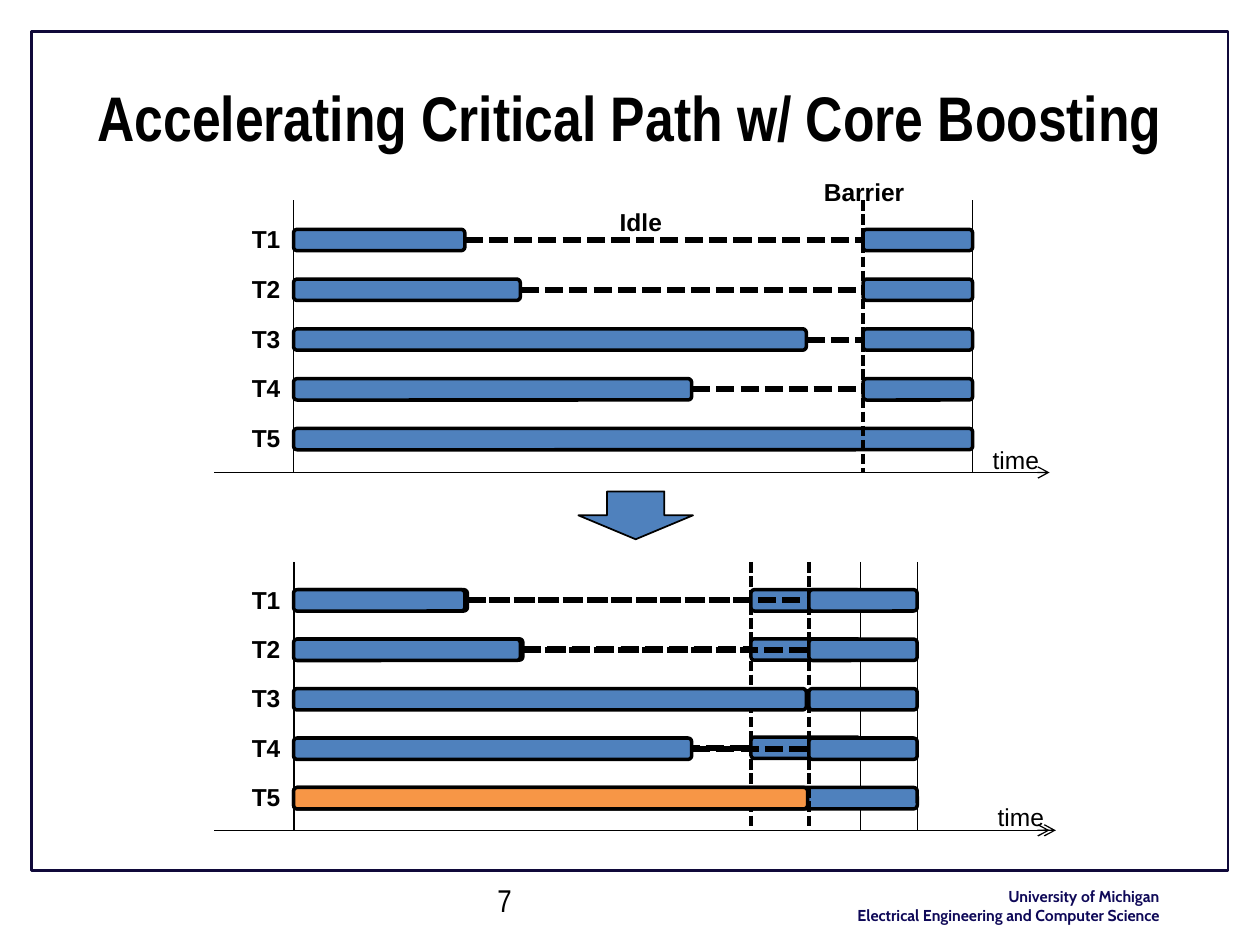
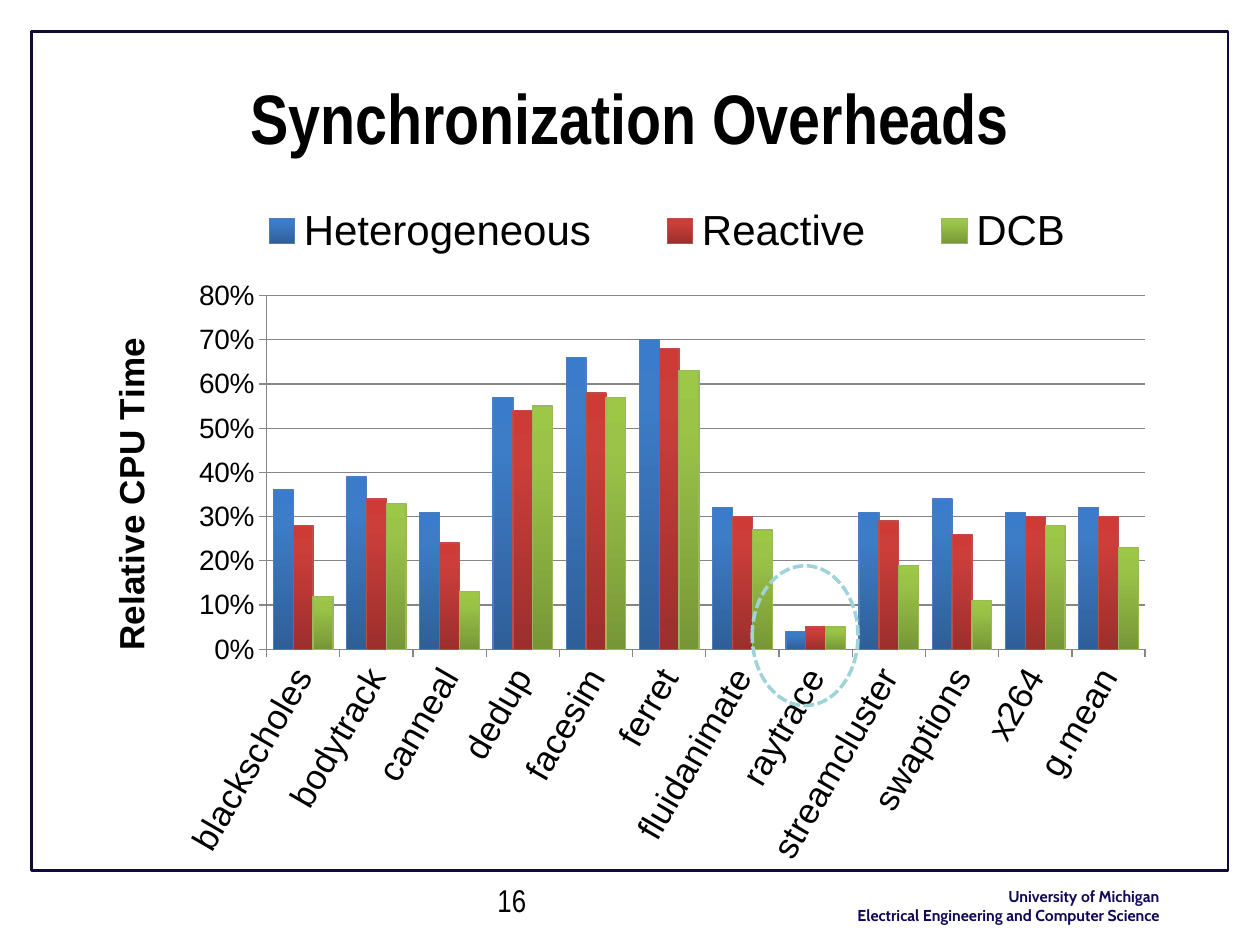
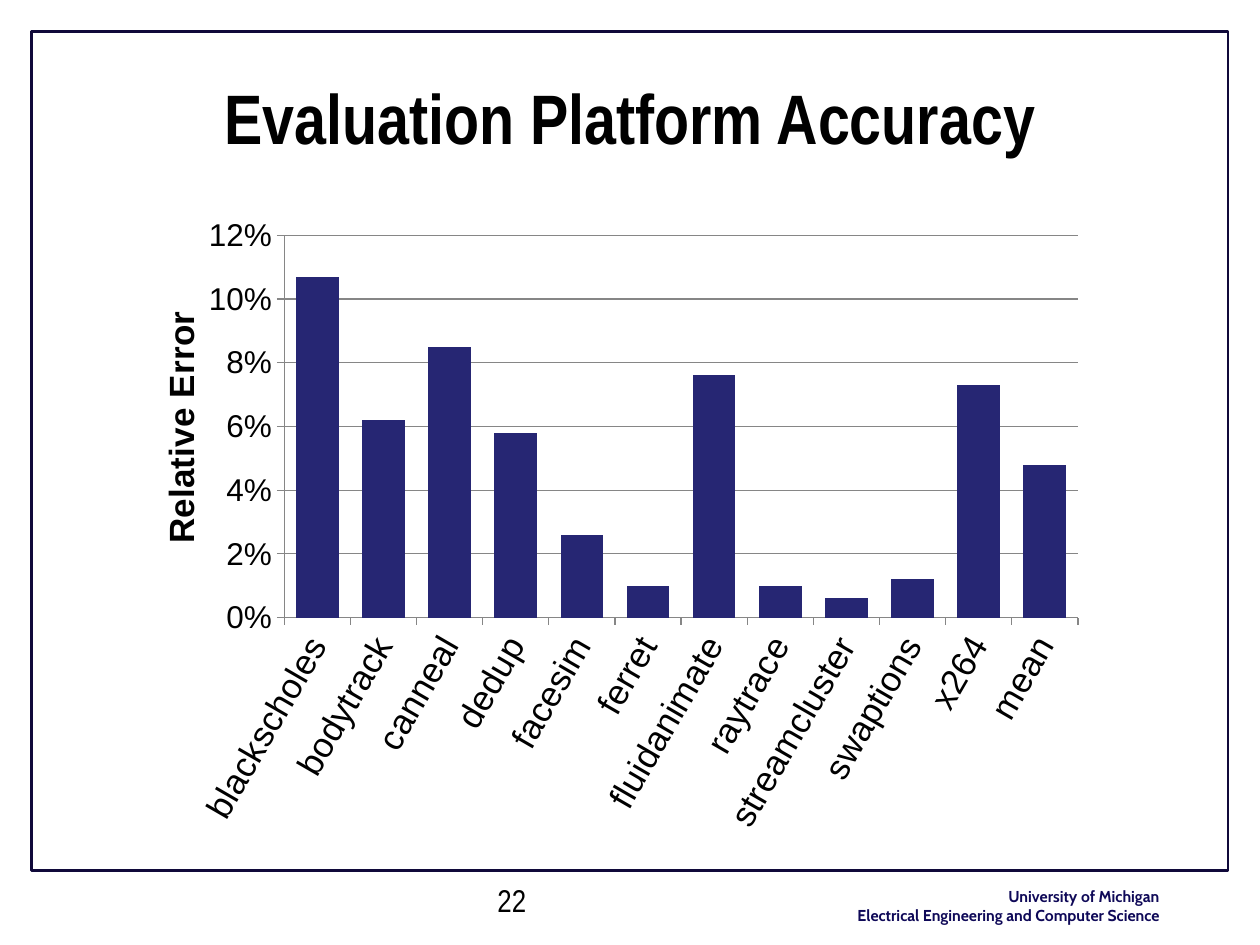
import copy

import lxml.etree
import pptx
import pptx.chart.data
import pptx.dml.color
import pptx.enum.chart
import pptx.enum.dml
import pptx.enum.shapes
import pptx.enum.text
import pptx.oxml.ns
import pptx.util

RGB = pptx.dml.color.RGBColor
Inches, Pt, qn = pptx.util.Inches, pptx.util.Pt, pptx.oxml.ns.qn
SHAPE = pptx.enum.shapes.MSO_SHAPE
ALIGN = pptx.enum.text.PP_ALIGN
DASH = pptx.enum.dml.MSO_LINE.SQUARE_DOT

BLACK = RGB(0x00, 0x00, 0x00)
NAVY_TEXT = RGB(0x0F, 0x09, 0x58)
NAVY_FRAME = RGB(0x10, 0x09, 0x3A)
BLUE = RGB(0x4F, 0x81, 0xBD)
ORANGE = RGB(0xF7, 0x96, 0x46)
AQUA = RGB(0x9E, 0xD3, 0xD7)
INDIGO = RGB(0x26, 0x26, 0x73)
GRID_GREY = RGB(0x86, 0x86, 0x86)

TITLE_FONT, BODY_FONT, FOOTER_FONT = "Arial Narrow", "Arial", "Cabin"
FOOTER = "University of Michigan\nElectrical Engineering and Computer Science"

THREADS = ("T1", "T2", "T3", "T4", "T5")
BAR_HEIGHT = 0.17
AXIS_START = 1.7

# Stops are where each thread reaches the barrier; None leaves a thread out.
# Threads in shared_runs take their first bar from the timeline drawn over this one.
BASELINE = dict(top=1.59, axis_y=3.75, first_row=1.82, last_row=3.4,
                start=2.33, barrier=6.85, end=7.72, axis_end=8.33, time_at=7.78,
                stops=(3.69, 4.13, 6.4, 5.49, 7.72), shared_runs=(), boosted=None)
BOOSTED_EARLY = dict(top=4.46, axis_y=6.59, first_row=4.68, last_row=6.24,
                     start=2.34, barrier=5.96, end=6.83, axis_end=8.38, time_at=None,
                     stops=(3.71, 4.15, None, 5.41, None), shared_runs=("T4",),
                     boosted=None)
BOOSTED = dict(top=4.46, axis_y=6.59, first_row=4.68, last_row=6.25,
               start=2.33, barrier=6.42, end=7.28, axis_end=8.33, time_at=7.82,
               stops=(3.69, 4.13, 6.4, 5.49, 7.28), shared_runs=(), boosted=6.41)

BENCHMARKS = ["blackscholes", "bodytrack", "canneal", "dedup", "facesim", "ferret",
              "fluidanimate", "raytrace", "streamcluster", "swaptions", "x264"]
# Plot, legend and axis title places are shares of the chart's size.
OVERHEADS = dict(
    box=(0.64, 1.54, 8.63, 5.45), plot=(0.171, 0.148, 0.808, 0.515),
    categories=BENCHMARKS + ["g.mean"], axis="Relative CPU Time", axis_at=(0.02, 0.2),
    top=0.8, step=0.1, tick_size=16, gap=69, legend=(0.116, 0.01, 0.847, 0.087),
    series=[
        ("Heterogeneous",
         (0.36, 0.39, 0.31, 0.57, 0.66, 0.7, 0.32, 0.04, 0.31, 0.34, 0.31, 0.32),
         ("2F5F99", "3D7CC7", "3A7CCB"), "4B7EBC"),
        ("Reactive",
         (0.28, 0.34, 0.24, 0.54, 0.58, 0.68, 0.3, 0.05, 0.29, 0.26, 0.3, 0.3),
         ("9C2F2D", "CB3E3A", "CE3B37"), "BF4C48"),
        ("DCB",
         (0.12, 0.33, 0.13, 0.55, 0.57, 0.63, 0.27, 0.05, 0.19, 0.11, 0.28, 0.23),
         ("779737", "9BC348", "9DC746"), "98B955"),
    ])
ACCURACY = dict(
    box=(1, 1.4, 7.71, 5.38), plot=(0.163, 0.087, 0.817, 0.564),
    categories=BENCHMARKS + ["mean"], axis="Relative Error", axis_at=(0.027, 0.19),
    top=0.12, step=0.02, tick_size=18, gap=55, legend=None,
    series=[
        ("Series 1",
         (0.107, 0.062, 0.085, 0.058, 0.026, 0.01, 0.076, 0.01, 0.006, 0.012, 0.073, 0.048),
         None, None),
    ])


def inches(lengths):
    return [Inches(length) for length in lengths]


def style_font(font, size, name, color=BLACK, bold=False):
    font.size, font.name, font.bold = Pt(size), name, bold
    font.color.rgb = color


def add_text(shapes, box, text, size=14, name=BODY_FONT, color=BLACK, bold=True,
             align=ALIGN.LEFT, wrap=True, anchor=pptx.enum.text.MSO_ANCHOR.TOP):
    frame = shapes.add_textbox(*inches(box)).text_frame
    frame.word_wrap, frame.vertical_anchor = wrap, anchor
    frame.text = text
    for paragraph in frame.paragraphs:
        paragraph.alignment = align
        style_font(paragraph.font, size, name, color, bold)


def add_outline(shapes, kind, box, width, color=BLACK, fill=None):
    shape = shapes.add_shape(kind, *inches(box))
    shape.shadow.inherit = False
    if fill is None:
        shape.fill.background()
    else:
        shape.fill.solid()
        shape.fill.fore_color.rgb = fill
    shape.line.color.rgb, shape.line.width = color, Pt(width)
    return shape


def add_line(shapes, begin, end, width=0.75, dashed=False):
    line = shapes.add_connector(pptx.enum.shapes.MSO_CONNECTOR.STRAIGHT,
                                *inches(begin + end))
    line.line.color.rgb, line.line.width = BLACK, Pt(width)
    if dashed:
        line.line.dash_style = DASH
    lxml.etree.SubElement(line._element.spPr, qn("a:effectLst"))
    return line


def add_timeline(slide, plan):
    """Draw the threads' bars, their idle times, the barrier and the time axis."""
    shapes = slide.shapes.add_group_shape().shapes
    top, axis_y, start, barrier, end = (
        plan[key] for key in ("top", "axis_y", "start", "barrier", "end"))
    pitch = (plan["last_row"] - plan["first_row"]) / (len(THREADS) - 1)
    row_tops = [plan["first_row"] + row * pitch for row in range(len(THREADS))]
    rows = [row for row in zip(THREADS, plan["stops"], row_tops) if row[1]]

    def add_bar(left, right, y, fill=BLUE):
        return add_outline(shapes, SHAPE.ROUNDED_RECTANGLE,
                           (left, y, right - left, BAR_HEIGHT), 2, fill=fill)

    for x in (start, end):
        add_line(shapes, (x, top), (x, axis_y))
    axis = add_line(shapes, (plan["axis_end"], axis_y), (AXIS_START, axis_y))
    lxml.etree.SubElement(axis.line._get_or_add_ln(), qn("a:headEnd"), type="arrow")

    runs = {thread: add_bar(start, stop, y) for thread, stop, y in rows
            if thread not in plan["shared_runs"]}
    add_line(shapes, (barrier, top), (barrier, axis_y), 2, dashed=True)
    for thread, stop, y in rows:
        if stop > barrier:
            continue
        resumed = add_bar(barrier, end, y)
        middle = y + BAR_HEIGHT / 2
        idle = add_line(shapes, (stop, middle), (barrier, middle), 3.5, dashed=True)
        if thread in runs:
            idle.begin_connect(runs[thread], 3)
        idle.end_connect(resumed, 1)
    if plan["time_at"]:
        for thread, y in zip(THREADS, row_tops):
            add_text(shapes, (1.9, y - 0.09, 0.74, 0.34), thread)
        add_text(shapes, (plan["time_at"], axis_y - 0.27, 0.86, 0.34), "time", bold=False)
    if plan["boosted"]:
        add_bar(start, plan["boosted"], row_tops[-1], ORANGE)


def manual_layout(shares, target=None):
    """Make a chart layout from x, y and, if given, w and h."""
    layout = lxml.etree.Element(qn("c:layout"))
    manual = lxml.etree.SubElement(layout, qn("c:manualLayout"))
    settings = [("layoutTarget", target)] if target else []
    settings += [("xMode", "edge"), ("yMode", "edge"), *zip("xywh", shares)]
    for tag, value in settings:
        lxml.etree.SubElement(manual, qn("c:" + tag), val=str(value))
    return layout


def place(parent, layout, after=None):
    """Put the layout first in its parent, or after the named child."""
    for old in parent.findall(qn("c:layout")):
        parent.remove(old)
    if after is None:
        parent.insert(0, layout)
    else:
        parent.find(qn(after)).addnext(layout)


def fill_gradient(series, colors):
    fill = series.format.fill
    fill.gradient()
    fill.gradient_angle = 90
    stop_list = next(series._element.iter(qn("a:gsLst")))
    stop_list.append(copy.deepcopy(stop_list[-1]))
    for stop, position, color in zip(fill.gradient_stops, (0, 0.8, 1), colors):
        stop.position = position
        stop.color.rgb = RGB.from_string(color)


def add_column_chart(slide, plan):
    data = pptx.chart.data.CategoryChartData(number_format="0%")
    data.categories = plan["categories"]
    for name, values, _, _ in plan["series"]:
        data.add_series(name, values)
    chart = slide.shapes.add_chart(pptx.enum.chart.XL_CHART_TYPE.COLUMN_CLUSTERED,
                                   *inches(plan["box"]), data).chart
    style_font(chart.font, 10, TITLE_FONT)
    chart.has_title = False
    chart.has_legend = plan["legend"] is not None
    if plan["legend"]:
        chart.legend.position = pptx.enum.chart.XL_LEGEND_POSITION.TOP
        chart.legend.include_in_layout = False
        style_font(chart.legend.font, 24, BODY_FONT)
        place(chart.legend._element, manual_layout(plan["legend"]), after="c:legendPos")
    place(chart._chartSpace.chart.plotArea, manual_layout(plan["plot"], "inner"))

    names, scale = chart.category_axis, chart.value_axis
    for axis, size in ((names, 20), (scale, plan["tick_size"])):
        style_font(axis.tick_labels.font, size, BODY_FONT)
        axis.format.line.color.rgb = GRID_GREY
        axis.major_tick_mark = pptx.enum.chart.XL_TICK_MARK.OUTSIDE
    names._element.txPr.find(qn("a:bodyPr")).set("rot", "-3600000")
    scale.minimum_scale, scale.maximum_scale = 0, plan["top"]
    scale.major_unit = plan["step"]
    scale.major_gridlines.format.line.color.rgb = GRID_GREY
    scale.tick_labels.number_format = "0%"
    scale.tick_labels.number_format_is_linked = False
    heading = scale.axis_title.text_frame
    heading.text = plan["axis"]
    style_font(heading.paragraphs[0].runs[0].font, 20, BODY_FONT, bold=True)
    heading._txBody.find(qn("a:bodyPr")).set("rot", "-5400000")
    place(scale.axis_title._element, manual_layout(plan["axis_at"]), after="c:tx")

    columns = chart.plots[0]
    columns.gap_width, columns.vary_by_categories = plan["gap"], False
    for series, (_, _, shades, edge) in zip(columns.series, plan["series"]):
        series.invert_if_negative = False
        if shades:
            fill_gradient(series, shades)
            series.format.line.color.rgb = RGB.from_string(edge)
            series.format.line.width = Pt(0.75)
        else:
            series.format.fill.solid()
            series.format.fill.fore_color.rgb = INDIGO


def add_framed_slide(deck, title, number, title_size=40):
    slide = deck.slides.add_slide(deck.slide_layouts[6])
    shapes = slide.shapes
    add_text(shapes, (6.4, 6.99, 2.9, 0.4), FOOTER, 9, FOOTER_FONT, NAVY_TEXT,
             align=ALIGN.RIGHT, wrap=False)
    add_outline(shapes, SHAPE.RECTANGLE, (0.25, 0.25, 9.5, 6.66), 1.25, NAVY_FRAME)
    add_text(shapes, (3.85, 6.94, 2.33, 0.44), str(number), 18, TITLE_FONT, bold=False)
    add_text(shapes, (0.5, 0.3, 9, 1.25), title, title_size, TITLE_FONT,
             align=ALIGN.CENTER, anchor=pptx.enum.text.MSO_ANCHOR.MIDDLE)
    return slide


def main():
    deck = pptx.Presentation()
    deck.slide_width, deck.slide_height = Inches(10), Inches(7.5)

    boosting = add_framed_slide(deck, "Accelerating Critical Path w/ Core Boosting", 7, 36)
    add_outline(boosting.shapes, SHAPE.DOWN_ARROW, (4.59, 3.9, 0.91, 0.38), 1, fill=BLUE)
    for plan in (BASELINE, BOOSTED_EARLY, BOOSTED):
        add_timeline(boosting, plan)
    add_text(boosting.shapes, (4.82, 1.59, 0.74, 0.34), "Idle")
    add_text(boosting.shapes, (6.44, 1.36, 0.86, 0.34), "Barrier")

    overheads = add_framed_slide(deck, "Synchronization Overheads", 16)
    add_column_chart(overheads, OVERHEADS)
    raytrace_ring = add_outline(overheads.shapes, SHAPE.OVAL, (5.97, 4.49, 0.84, 1.11),
                                2, AQUA)
    raytrace_ring.line.dash_style = DASH

    accuracy = add_framed_slide(deck, "Evaluation Platform Accuracy", 22)
    add_column_chart(accuracy, ACCURACY)

    deck.save("out.pptx")


if __name__ == "__main__":
    main()
